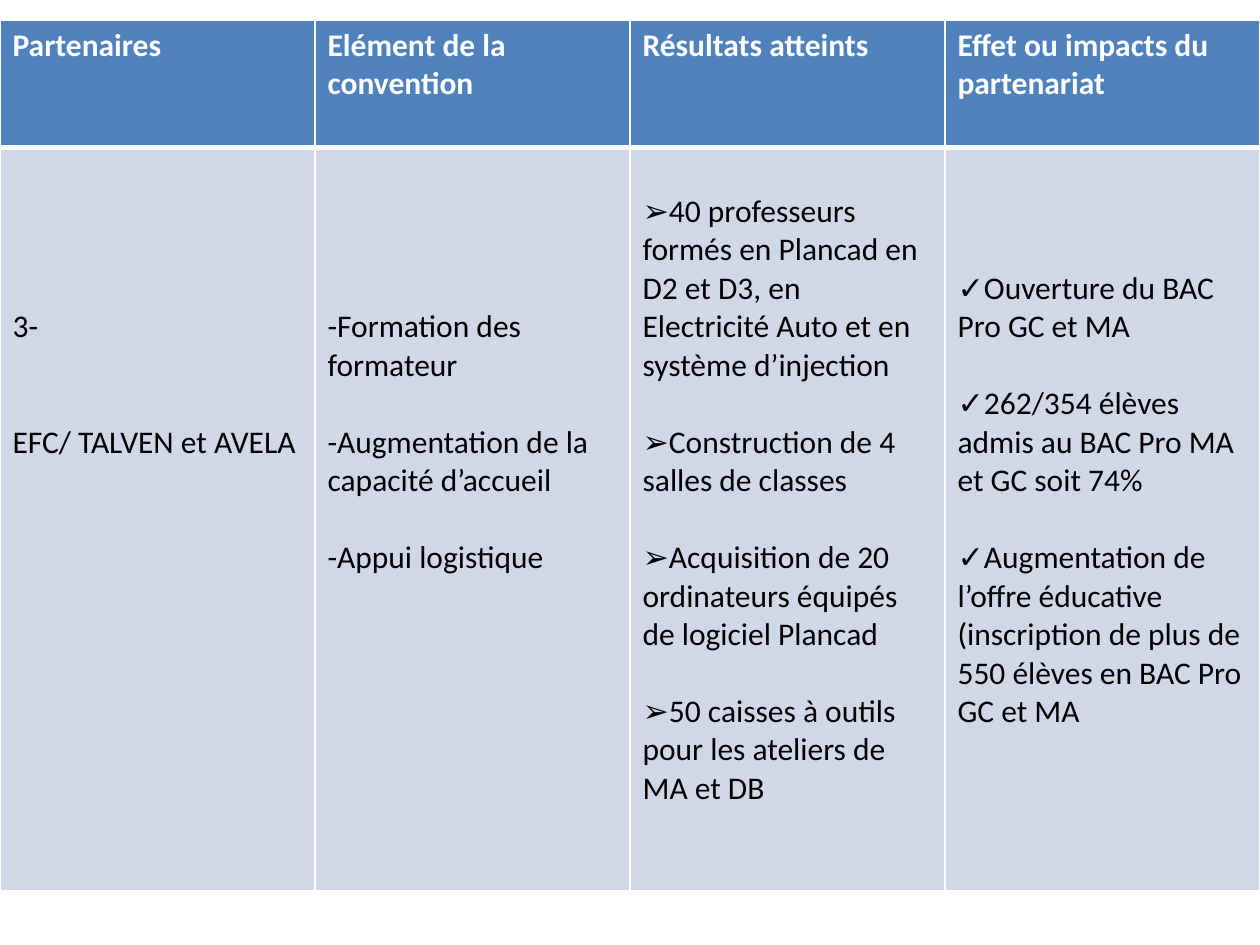
from dataclasses import dataclass

from lxml import etree
from pptx import Presentation
from pptx import util as u
from pptx.dml.color import RGBColor
from pptx.enum import text
from pptx.oxml import ns


@dataclass(frozen=True)
class Theme:
    font: str = "Calibri"
    size: int = 18
    line: int = 22          # height of one text line
    margin: float = 3.6     # top margin of a cell
    header_fill: str = "4F81BD"
    header_text: str = "FFFFFF"
    body_fill: str = "D0D8E8"
    body_text: str = "000000"
    border: str = "FFFFFF"
    thin: int = 1
    thick: int = 3


@dataclass(frozen=True)
class Column:
    heading: str
    items: tuple
    offset: int             # lines left free above the first item
    gap: int = 1            # lines left free between items
    bullet: str = ""


THEME = Theme()
COLUMNS = (
    Column("Partenaires", ("3-", "EFC/ TALVEN et AVELA"), offset=4, gap=2),
    Column("Elément de la convention", (
        "Formation des formateur",
        "Augmentation de la capacité d’accueil",
        "Appui logistique",
    ), offset=4, bullet="-"),
    Column("Résultats atteints", (
        "40 professeurs formés en Plancad en D2 et D3, en Electricité Auto "
        "et en système d’injection",
        "Construction de 4 salles de classes",
        "Acquisition de 20 ordinateurs équipés de logiciel Plancad",
        "50 caisses à outils pour les ateliers de MA et DB",
    ), offset=1, bullet="➢"),
    Column("Effet ou impacts du partenariat", (
        "Ouverture du BAC Pro GC et MA",
        "262/354 élèves admis au BAC Pro MA et GC soit 74%",
        "Augmentation de l’offre éducative (inscription de plus de 550 élèves "
        "en BAC Pro GC et MA",
    ), offset=3, bullet="✓"),
)


def add_element(parent, tag, **attributes):
    return etree.SubElement(parent, ns.qn(tag), attributes)


def style_cell(cell, fill, top, bottom):
    """Fill the cell and draw its four borders."""
    cell.vertical_anchor = text.MSO_ANCHOR.TOP
    properties = cell._tc.get_or_add_tcPr()
    widths = {"a:lnL": THEME.thin, "a:lnR": THEME.thin, "a:lnT": top, "a:lnB": bottom}
    for tag, width in widths.items():
        border = add_element(properties, tag, w=str(u.Pt(width)))
        solid = add_element(border, "a:solidFill")
        add_element(solid, "a:srgbClr", val=THEME.border)
    cell.fill.solid()
    cell.fill.fore_color.rgb = RGBColor.from_string(fill)


def set_bullet(para, mark):
    """Give the paragraph a bullet in the text font, right before its words."""
    properties = para._p.get_or_add_pPr()
    properties.set("marL", "0")
    properties.set("indent", "0")
    add_element(properties, "a:buFont", typeface=THEME.font)
    add_element(properties, "a:buChar", char=mark)


def write_para(para, words, color, bold=False):
    span = para.add_run()
    span.text = words
    span.font.name = THEME.font
    span.font.size = u.Pt(THEME.size)
    span.font.bold = bold
    span.font.color.rgb = RGBColor.from_string(color)


def fill_header(cell, column):
    style_cell(cell, THEME.header_fill, THEME.thin, THEME.thick)
    write_para(cell.text_frame.paragraphs[0], column.heading, THEME.header_text, True)


def fill_body(cell, column):
    style_cell(cell, THEME.body_fill, THEME.thick, THEME.thin)
    cell.margin_top = u.Pt(THEME.margin + column.offset * THEME.line)
    frame = cell.text_frame
    for index, item in enumerate(column.items):
        para = frame.add_paragraph() if index else frame.paragraphs[0]
        if index:
            para.space_before = u.Pt(column.gap * THEME.line)
        if column.bullet:
            set_bullet(para, column.bullet)
        write_para(para, item, THEME.body_text)


def add_partner_table(page, left, top, width, heights):
    """Place the partner table, with equal columns, in the given box."""
    box = page.shapes.add_table(len(heights), len(COLUMNS), u.Pt(left), u.Pt(top),
                                u.Pt(width), u.Pt(sum(heights)))
    table = box.table
    table.horz_banding = False
    for row, height in zip(table.rows, heights):
        row.height = u.Pt(height)
    for index, column in enumerate(COLUMNS):
        table.columns[index].width = u.Pt(width / len(COLUMNS))
        fill_header(table.cell(0, index), column)
        fill_body(table.cell(1, index), column)


def main():
    deck = Presentation()
    deck.slide_width, deck.slide_height = u.Pt(720), u.Pt(540)
    page = deck.slides.add_slide(deck.slide_layouts[6])
    add_partner_table(page, left=0, top=11.4, width=720, heights=(73, 424.4))
    deck.save("out.pptx")


if __name__ == "__main__":
    main()
